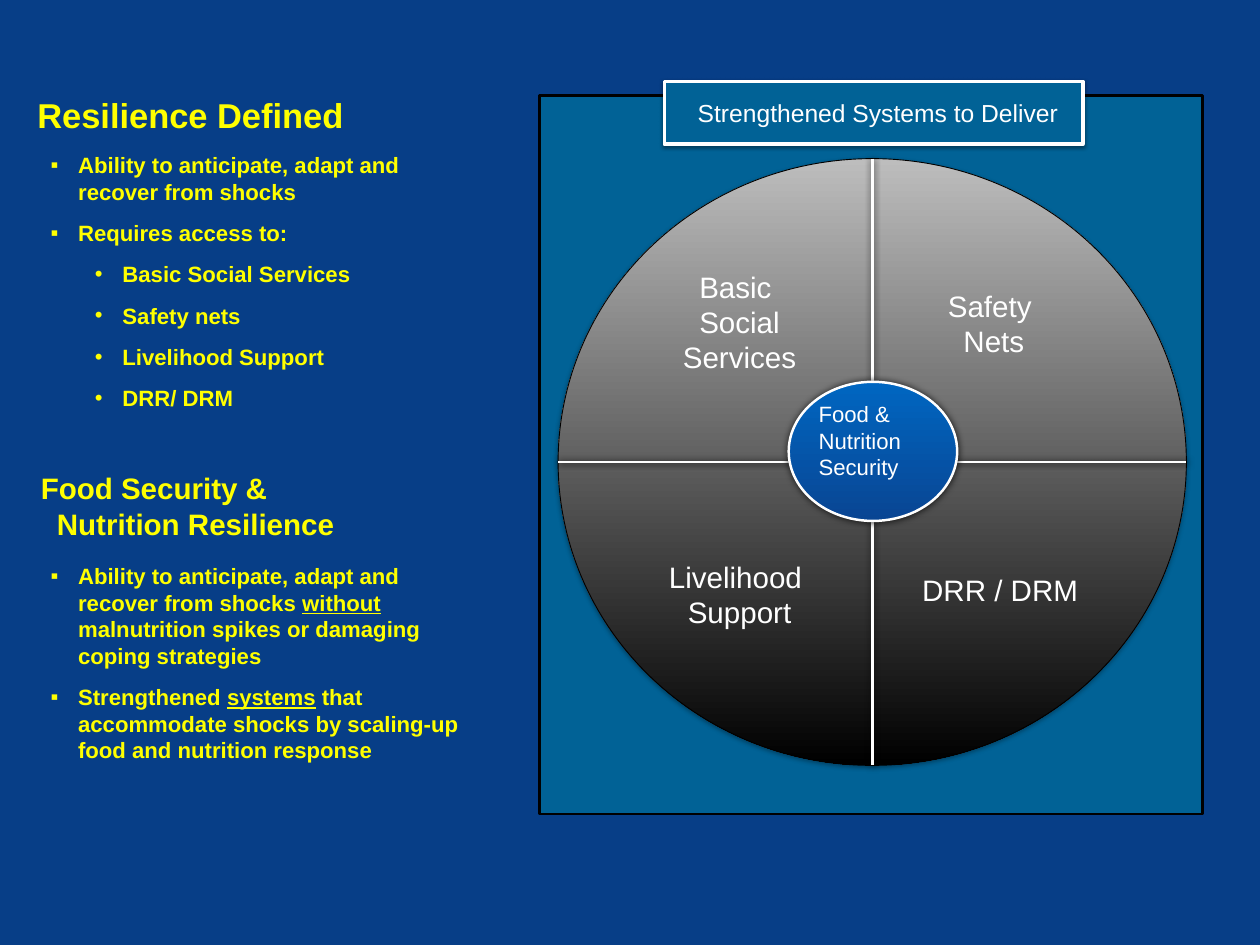
"""Build the slide on resilience and on food and nutrition security."""
from lxml.etree import SubElement
from pptx import Presentation
from pptx.dml.color import RGBColor
from pptx.enum.shapes import MSO_CONNECTOR, MSO_SHAPE
from pptx.enum.text import MSO_ANCHOR, MSO_AUTO_SIZE, PP_ALIGN
from pptx.oxml.ns import qn
from pptx.util import Cm, Pt

NAVY = RGBColor(0x07, 0x3E, 0x87)
TEAL = RGBColor(0x01, 0x62, 0x96)
BLACK = RGBColor(0x00, 0x00, 0x00)
SILVER = RGBColor(0xBD, 0xBD, 0xBD)
WHITE = RGBColor(0xFF, 0xFF, 0xFF)
YELLOW = RGBColor(0xFF, 0xFF, 0x00)
BRIGHT_BLUE = RGBColor(0x00, 0x66, 0xC1)
DEEP_BLUE = RGBColor(0x09, 0x45, 0x93)

GLOW = (80, 6, 0)
DISC = (16, 4.55, 18.01, 17.4)
BULLETS = [("▪", 0.79), ("•", 2.06)]
HANGING = 0.79

RESILIENCE = [
    (0, "Ability to anticipate, adapt and recover from shocks"),
    (0, "Requires access to:"),
    (1, "Basic Social Services"),
    (1, "Safety nets"),
    (1, "Livelihood Support"),
    (1, "DRR/ DRM"),
]
NUTRITION_RESILIENCE = [
    (0, "Ability to anticipate, adapt and recover from shocks _without_ "
        "malnutrition spikes or damaging coping strategies"),
    (0, "Strengthened _systems_ that accommodate shocks by scaling-up "
        "food and nutrition response"),
]
QUADRANTS = [
    (["Basic ", "Social Services"], (18.34, 7.57, 5.72, 3.33)),
    (["Safety ", "Nets"], (25.63, 8.13, 5.72, 2.31)),
    (["Livelihood ", "Support"], (18.34, 15.9, 5.72, 2.31)),
    (["DRR / DRM"], (25.81, 16.26, 5.72, 1.27)),
]


def apply(target, values):
    """Set each named attribute of the target."""
    for name, value in values.items():
        setattr(target, name, value)


def place(holder, box):
    """Move and size a placeholder."""
    apply(holder, dict(zip(("left", "top", "width", "height"), map(Cm, box))))


def add_text_box(slide, box):
    """Add an empty text box."""
    return slide.shapes.add_textbox(*map(Cm, box))


def format_frame(frame, margins=(0, 0, 0, 0), anchor=MSO_ANCHOR.TOP,
                 auto_size=MSO_AUTO_SIZE.NONE):
    """Set wrapping, anchor and margins (left, top, right, bottom)."""
    apply(frame, {"word_wrap": True, "auto_size": auto_size,
                  "vertical_anchor": anchor})
    sides = ("margin_left", "margin_top", "margin_right", "margin_bottom")
    apply(frame, dict(zip(sides, map(Cm, margins))))


def add_paragraph(frame, index, text, size, color, bold=False, align=PP_ALIGN.LEFT):
    """Write one paragraph, underlining what stands between underscores."""
    paragraph = frame.paragraphs[0] if index == 0 else frame.add_paragraph()
    paragraph.alignment = align
    for part, words in enumerate(text.split("_")):
        run = paragraph.add_run()
        run.text = words
        apply(run.font, {"name": "Arial", "size": Pt(size), "bold": bold,
                         "underline": part % 2 == 1})
        run.font.color.rgb = color
    return paragraph


def set_indent(paragraph, left, first=0):
    """Set the left margin and first-line indent."""
    properties = paragraph._p.get_or_add_pPr()
    properties.set("marL", str(Cm(left)))
    properties.set("indent", str(Cm(first)))
    return properties


def fill_headline(holder, lines, size):
    """Write a yellow headline whose later lines are indented."""
    format_frame(holder.text_frame, anchor=MSO_ANCHOR.BOTTOM)
    for index, line in enumerate(lines):
        paragraph = add_paragraph(holder.text_frame, index, line, size, YELLOW, True)
        set_indent(paragraph, 0.46 if index else 0)


def fill_list(holder, items):
    """Write a two-level bulleted list."""
    format_frame(holder.text_frame)
    for index, (level, text) in enumerate(items):
        paragraph = add_paragraph(holder.text_frame, index, text, 18, YELLOW, True)
        apply(paragraph, {"level": level, "space_before": Pt(12)})
        mark, left = BULLETS[level]
        properties = set_indent(paragraph, left, -HANGING)
        SubElement(properties, qn("a:buFont"), typeface="Arial")
        SubElement(properties, qn("a:buChar"), char=mark)


def add_shadow(element, opacity, blur, distance):
    """Add a black shadow that falls downwards."""
    effects = SubElement(element.spPr, qn("a:effectLst"))
    shadow = SubElement(effects, qn("a:outerShdw"), blurRad=str(Pt(blur)),
                        dist=str(Pt(distance)), dir="5400000",
                        algn="ctr", rotWithShape="0")
    color = SubElement(shadow, qn("a:srgbClr"), val=str(BLACK))
    SubElement(color, qn("a:alpha"), val=str(opacity * 1000))


def add_figure(slide, kind, box, colors, outline, width, shadow=None):
    """Add a shape with a plain fill, or a gradient from top to bottom."""
    figure = slide.shapes.add_shape(kind, *map(Cm, box))
    if len(colors) == 1:
        figure.fill.solid()
        figure.fill.fore_color.rgb = colors[0]
    else:
        figure.fill.gradient()
        figure.fill.gradient_angle = 270
        for stop, color in zip(figure.fill.gradient_stops, colors):
            stop.color.rgb = color
    figure.line.color.rgb = outline
    figure.line.width = Pt(width)
    if shadow:
        add_shadow(figure._element, *shadow)
    else:
        figure.shadow.inherit = False
    return figure


def add_divider(slide, start, end):
    """Add a white line across the disc."""
    divider = slide.shapes.add_connector(
        MSO_CONNECTOR.STRAIGHT, *map(Cm, start + end))
    divider.line.color.rgb = WHITE
    divider.line.width = Pt(2)
    add_shadow(divider._element, *GLOW)


def add_label(slide, lines, box):
    """Add the centred name of a quadrant."""
    frame = add_text_box(slide, box).text_frame
    format_frame(frame, (0.25, 0.13, 0.25, 0.13),
                 auto_size=MSO_AUTO_SIZE.SHAPE_TO_FIT_TEXT)
    for index, line in enumerate(lines):
        add_paragraph(frame, index, line, 24, WHITE, align=PP_ALIGN.CENTER)


def add_systems_diagram(slide):
    """Draw the panel, its banner and the divided disc."""
    add_figure(slide, MSO_SHAPE.RECTANGLE, (15.47, 2.74, 19, 20.6), [TEAL], BLACK, 2)
    banner = add_figure(slide, MSO_SHAPE.RECTANGLE, (19.05, 2.34, 11.99, 1.8),
                        [TEAL], WHITE, 3, (38, 3.1, 1.6))
    format_frame(banner.text_frame, (0.15,) * 4, MSO_ANCHOR.MIDDLE)
    set_indent(add_paragraph(banner.text_frame, 0, "Strengthened Systems to Deliver",
                             20, WHITE, align=PP_ALIGN.CENTER), 0.25)

    add_figure(slide, MSO_SHAPE.OVAL, DISC, [SILVER, BLACK], BLACK, 0.75, (35, 3.1, 1.8))
    left, top, width, height = DISC
    middle, centre = left + width / 2, top + height / 2
    add_divider(slide, (middle, top), (middle, top + height))
    add_divider(slide, (left, centre), (left + width, centre))
    for lines, box in QUADRANTS:
        add_label(slide, lines, box)

    core = add_figure(slide, MSO_SHAPE.OVAL, (22.61, 10.95, 4.83, 3.99),
                      [BRIGHT_BLUE, DEEP_BLUE], WHITE, 2, GLOW)
    format_frame(core.text_frame, (0.15, 0.15, 0.15, 0.78), MSO_ANCHOR.MIDDLE)
    add_paragraph(core.text_frame, 0, "Food & Nutrition Security", 18, WHITE)


def main():
    """Build and save the slide."""
    deck = Presentation()
    apply(deck, {"slide_width": Cm(36.12), "slide_height": Cm(27.1)})
    slide = deck.slides.add_slide(deck.slide_layouts[1])
    slide.background.fill.solid()
    slide.background.fill.fore_color.rgb = NAVY

    definition, access = slide.shapes.title, slide.placeholders[1]
    place(definition, (1.07, 2.54, 11.89, 1.35))
    fill_headline(definition, ["Resilience Defined"], 28)
    place(access, (1.45, 4.34, 11.89, 8))
    fill_list(access, RESILIENCE)

    add_systems_diagram(slide)

    fill_headline(add_text_box(slide, (1.17, 13.34, 13.69, 2.18)),
                  ["Food Security &", "Nutrition Resilience"], 24)
    fill_list(add_text_box(slide, (1.45, 16.13, 11.89, 5.94)), NUTRITION_RESILIENCE)
    deck.save("out.pptx")


if __name__ == "__main__":
    main()
